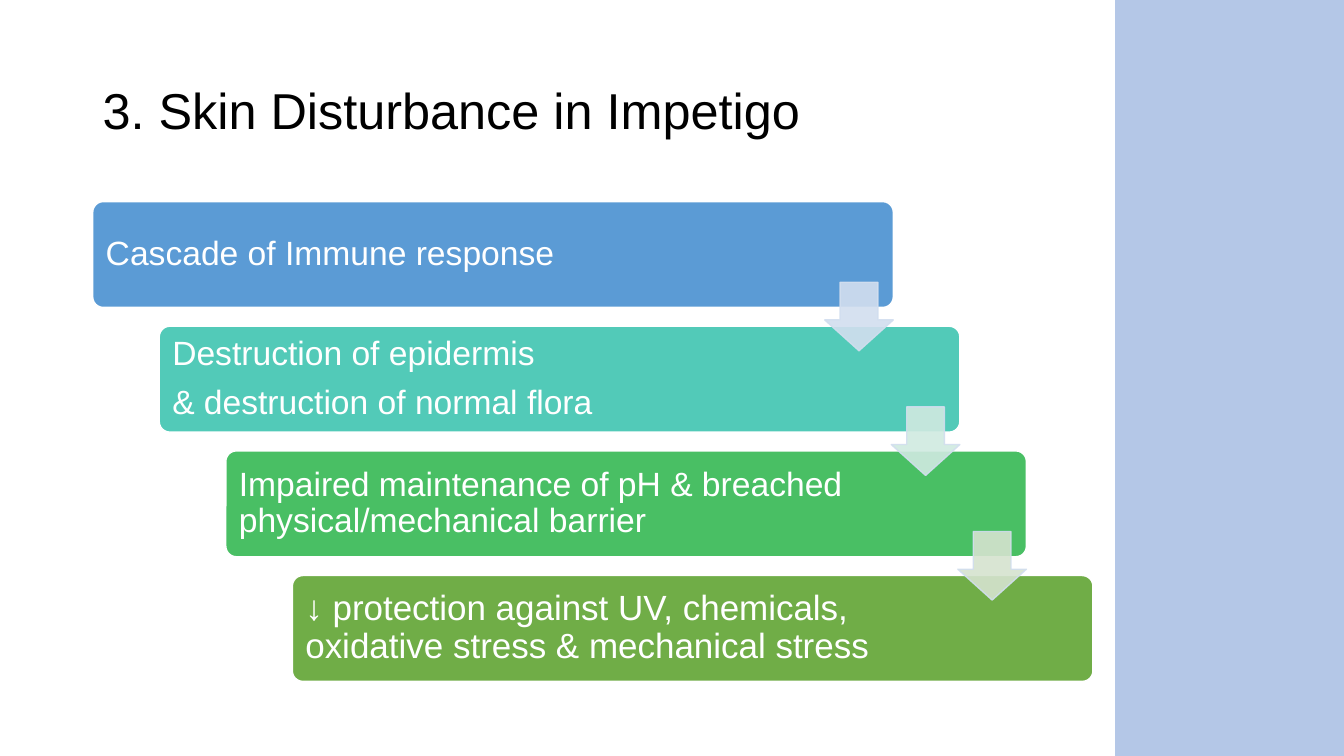
from pptx import Presentation
from pptx.dml.color import RGBColor
from pptx.enum.shapes import MSO_SHAPE
from pptx.enum.text import MSO_ANCHOR, PP_ALIGN
from pptx.oxml.ns import qn
from pptx.util import Inches, Pt
from lxml import etree

RECTANGLE = MSO_SHAPE.RECTANGLE
ROUNDED = MSO_SHAPE.ROUNDED_RECTANGLE
DOWN_ARROW = MSO_SHAPE.DOWN_ARROW
MIDDLE = MSO_ANCHOR.MIDDLE
LEFT = PP_ALIGN.LEFT

STEP_WIDTH, STEP_HEIGHT = 7.94, 1.05
FIRST_LEFT, FIRST_TOP = 0.92, 2
SHIFT_RIGHT = 0.66
SHIFT_DOWN = (5.71 - FIRST_TOP) / 3
ARROW_SIZE = 0.68

# Paragraphs, text size, step fill, fill of the arrow leaving the step
STEPS = [
    (["Cascade of Immune response"], 24, "5B9BD5", "D2DEEF"),
    (["Destruction of epidermis", "& destruction of normal flora"], 24, "52CAB8", "D0EAE1"),
    (["Impaired maintenance of pH & breached physical/mechanical barrier"], 24, "49BF64", "D5E3CF"),
    (["↓ protection against UV, chemicals, oxidative stress & mechanical stress"], 25, "70AD47", None),
]


def paint(color_format, hex_color, opacity=100):
    """Set a solid colour, with its opacity in percent."""
    color_format.solid()
    color_format.fore_color.rgb = RGBColor.from_string(hex_color)
    if opacity < 100:
        color = color_format._xPr.find(qn("a:solidFill"))[0]
        etree.SubElement(color, qn("a:alpha")).set("val", str(opacity * 1000))


def write(frame, paragraphs, size, hex_color, space_after, margins):
    frame.word_wrap = True
    frame.vertical_anchor = MIDDLE
    for side, inches in margins.items():
        setattr(frame, f"margin_{side}", Inches(inches))
    frame.text = "\n".join(paragraphs)
    for paragraph in frame.paragraphs:
        for name, value in {"alignment": LEFT, "line_spacing": 0.9,
                            "space_after": Pt(space_after)}.items():
            setattr(paragraph, name, value)
        paragraph.font.name = "Arial"
        paragraph.font.size = Pt(size)
        paragraph.font.color.rgb = RGBColor.from_string(hex_color)


prs = Presentation()
prs.slide_width, prs.slide_height = Inches(13.33), Inches(7.5)
slide = prs.slides.add_slide(prs.slide_layouts[6])
shapes = slide.shapes

side_band = shapes.add_shape(RECTANGLE, Inches(11.06), 0, Inches(2.27), Inches(7.5))
side_band.shadow.inherit = False
paint(side_band.fill, "B4C7E7")
side_band.line.fill.background()

title = shapes.add_textbox(Inches(0.92), Inches(0.4), Inches(9.93), Inches(1.45))
write(title.text_frame, ["3. Skin Disturbance in Impetigo"], 36, "000000", 0,
      {"left": 0.1, "right": 0.1, "top": 0.05, "bottom": 0.05})

for index, (paragraphs, size, step_color, _) in enumerate(STEPS):
    step = shapes.add_shape(ROUNDED,
                            Inches(FIRST_LEFT + index * SHIFT_RIGHT),
                            Inches(FIRST_TOP + index * SHIFT_DOWN),
                            Inches(STEP_WIDTH), Inches(STEP_HEIGHT))
    step.shadow.inherit = False
    step.adjustments[0] = 0.1
    paint(step.fill, step_color)
    paint(step.line.fill, "FFFFFF")
    step.line.width = Pt(1)
    # The wide right margin keeps the text clear of the arrows
    write(step.text_frame, paragraphs, size, "FFFFFF", 9.5,
          {"left": 0.1, "right": 1.45, "top": 0.1, "bottom": 0.1})

# Arrows come after all steps so that they lie on top of both neighbours
for index, (_, _, _, arrow_color) in enumerate(STEPS[:-1]):
    arrow = shapes.add_shape(DOWN_ARROW,
                             Inches(FIRST_LEFT + index * SHIFT_RIGHT + STEP_WIDTH - ARROW_SIZE),
                             Inches(FIRST_TOP + index * SHIFT_DOWN + 0.8),
                             Inches(ARROW_SIZE), Inches(ARROW_SIZE))
    arrow.shadow.inherit = False
    arrow.adjustments[0] = 0.45
    arrow.adjustments[1] = 0.55
    # Head length first, then shaft width
    arrow.adjustments[0], arrow.adjustments[1] = 0.55, 0.45
    paint(arrow.fill, arrow_color, 90)
    paint(arrow.line.fill, "D2DEEF", 90)
    arrow.line.width = Pt(1)

prs.save("out.pptx")
